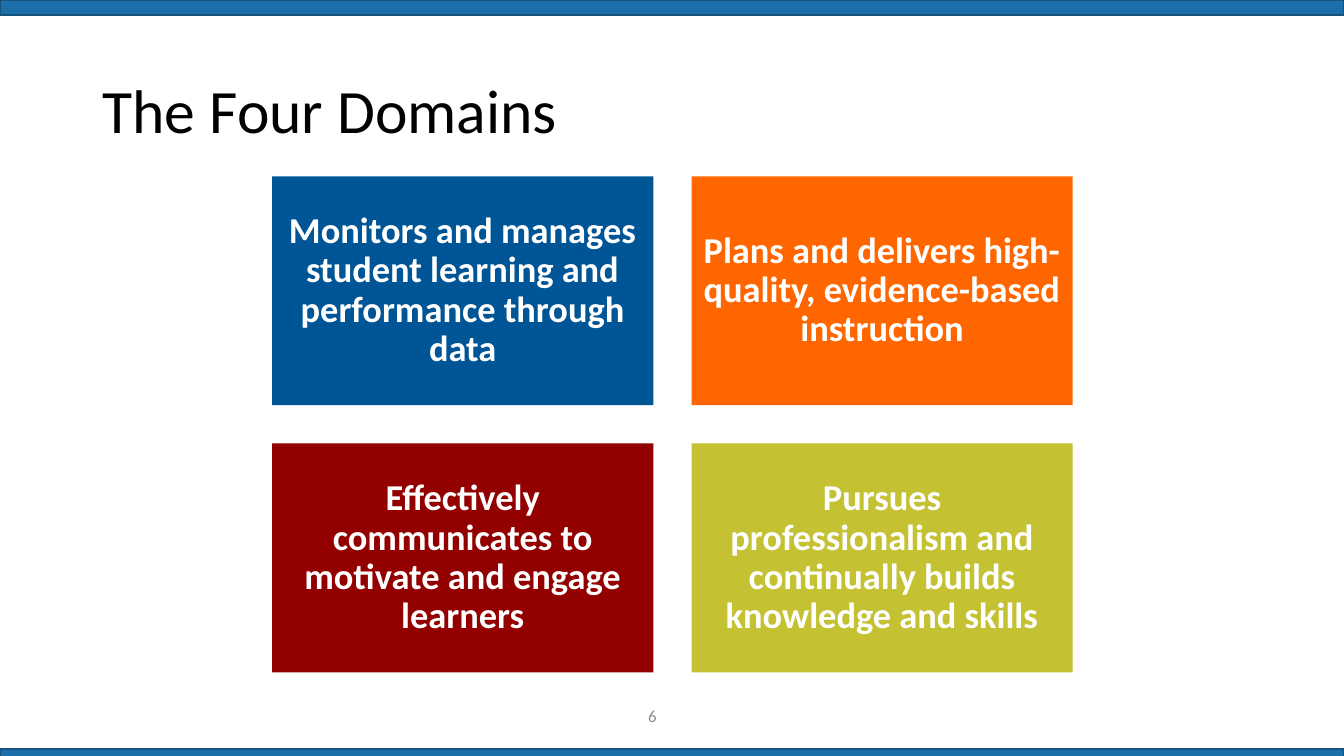
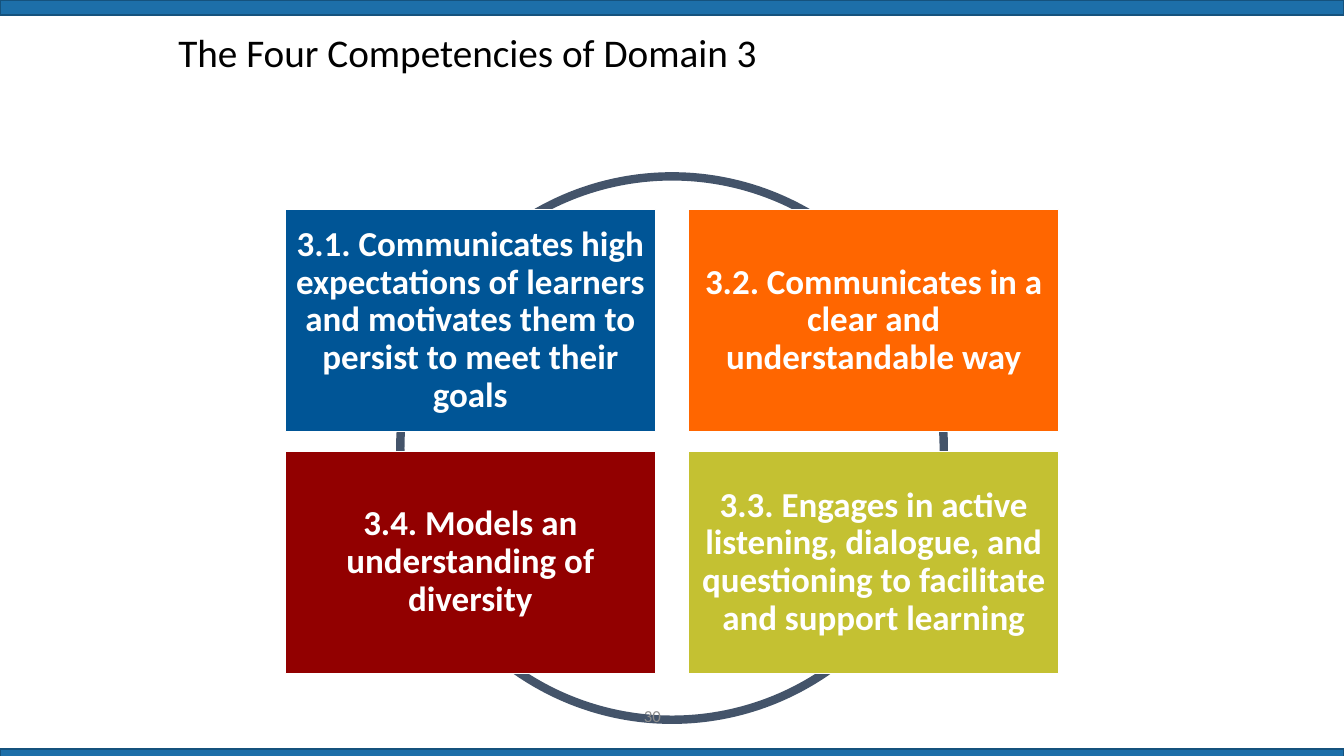
from pptx import Presentation
from pptx.dml.color import RGBColor
from pptx.enum.shapes import MSO_SHAPE as SHAPE
from pptx.enum.text import MSO_ANCHOR as ANCHOR, PP_ALIGN as ALIGN
from pptx.util import Inches, Pt

WIDTH, HEIGHT = 13.33, 7.5
FONT = "Calibri"
COLORS = {
    "band": "1D6FA9",
    "band_edge": "15527D",
    "blue": "005596",
    "orange": "FF6600",
    "red": "920000",
    "olive": "C4C132",
    "ring": "44546A",
    "white": "FFFFFF",
    "black": "000000",
    "gray": "8C8C8C",
}
CARD_COLORS = ("blue", "orange", "red", "olive")

DOMAINS = (
    "Monitors and manages student learning and performance through data",
    "Plans and delivers high-quality, evidence-based instruction",
    "Effectively communicates to motivate and engage learners",
    "Pursues professionalism and continually builds knowledge and skills",
)
COMPETENCIES = (
    "3.1. Communicates high expectations of learners and motivates them to persist to meet their goals",
    "3.2. Communicates in a clear and understandable way",
    "3.4. Models an understanding of diversity",
    "3.3. Engages in active listening, dialogue, and questioning to facilitate and support learning",
)


def rgb(name):
    """Return the palette colour of the given name."""
    return RGBColor.from_string(COLORS[name])


def add_figure(slide, kind, box, fill=None, line=None, line_width=1):
    """Add a preset shape with an optional fill and outline."""
    sp = slide.shapes.add_shape(kind, *map(Inches, box))
    sp.shadow.inherit = False
    if fill:
        sp.fill.solid()
        sp.fill.fore_color.rgb = rgb(fill)
    else:
        sp.fill.background()
    if line:
        sp.line.color.rgb = rgb(line)
        sp.line.width = Pt(line_width)
    else:
        sp.line.fill.background()
    return sp


def write(sp, text, size, color="black", bold=False, align=ALIGN.LEFT, spacing=None, inset=None):
    """Write one vertically centred paragraph into a shape."""
    tf = sp.text_frame
    tf.word_wrap = True
    tf.vertical_anchor = ANCHOR.MIDDLE
    if inset is not None:
        tf.margin_left = tf.margin_right = tf.margin_top = tf.margin_bottom = Inches(inset)
    p = tf.paragraphs[0]
    p.alignment = align
    p.line_spacing = spacing
    r = p.add_run()
    r.text = text
    r.font.name = FONT
    r.font.size = Pt(size)
    r.font.bold = bold
    r.font.color.rgb = rgb(color)


def add_text(slide, box, text, size, **fmt):
    """Add a text box holding one paragraph."""
    write(slide.shapes.add_textbox(*map(Inches, box)), text, size, **fmt)


def add_bands(slide):
    """Add the bands along the bottom and top edges."""
    for top in (HEIGHT - 0.07, 0):
        add_figure(slide, SHAPE.RECTANGLE, (0, top, WIDTH, 0.15), "band", "band_edge")


def add_title(slide, box, text, size):
    """Add the slide title."""
    add_text(slide, box, text, size, spacing=0.9)


def add_number(slide, number):
    """Add the page number at the foot."""
    add_text(slide, (4.97, 6.9, 3, 0.4), str(number), 12, color="gray", align=ALIGN.CENTER)


def add_cards(slide, texts, origin, card, gap, size, inset, line=None):
    """Add four coloured cards in two columns and two rows."""
    for i, (text, color) in enumerate(zip(texts, CARD_COLORS)):
        row, col = divmod(i, 2)
        left = origin[0] + col * (card[0] + gap[0])
        top = origin[1] + row * (card[1] + gap[1])
        sp = add_figure(slide, SHAPE.RECTANGLE, (left, top, *card), color, line)
        write(sp, text, size, color="white", bold=True, align=ALIGN.CENTER,
              spacing=0.9, inset=inset)


def new_slide(prs):
    """Add a blank slide with its bands."""
    slide = prs.slides.add_slide(prs.slide_layouts[6])
    add_bands(slide)
    return slide


def build_domains(prs):
    """Build the slide of the four domains."""
    slide = new_slide(prs)
    add_title(slide, (0.92, 0.4, 11.5, 1.45), "The Four Domains", 44)
    add_cards(slide, DOMAINS, origin=(2.7, 1.75), card=(3.78, 2.27),
              gap=(0.38, 0.38), size=26, inset=0.11)
    add_number(slide, 6)


def build_competencies(prs):
    """Build the slide of the competencies laid over a ring."""
    slide = new_slide(prs)
    add_figure(slide, SHAPE.OVAL, (3.97, 1.75, 5.39, 5.39), line="ring", line_width=6)
    add_title(slide, (1.67, 0.17, 7.42, 0.75), "The Four Competencies of Domain 3", 28)
    add_cards(slide, COMPETENCIES, origin=(2.83, 2.08), card=(3.67, 2.2),
              gap=(0.33, 0.2), size=25, inset=0.1, line="white")
    add_number(slide, 30)


def main():
    """Build and save the presentation."""
    prs = Presentation()
    prs.slide_width, prs.slide_height = Inches(WIDTH), Inches(HEIGHT)
    build_domains(prs)
    build_competencies(prs)
    prs.save("out.pptx")


if __name__ == "__main__":
    main()
